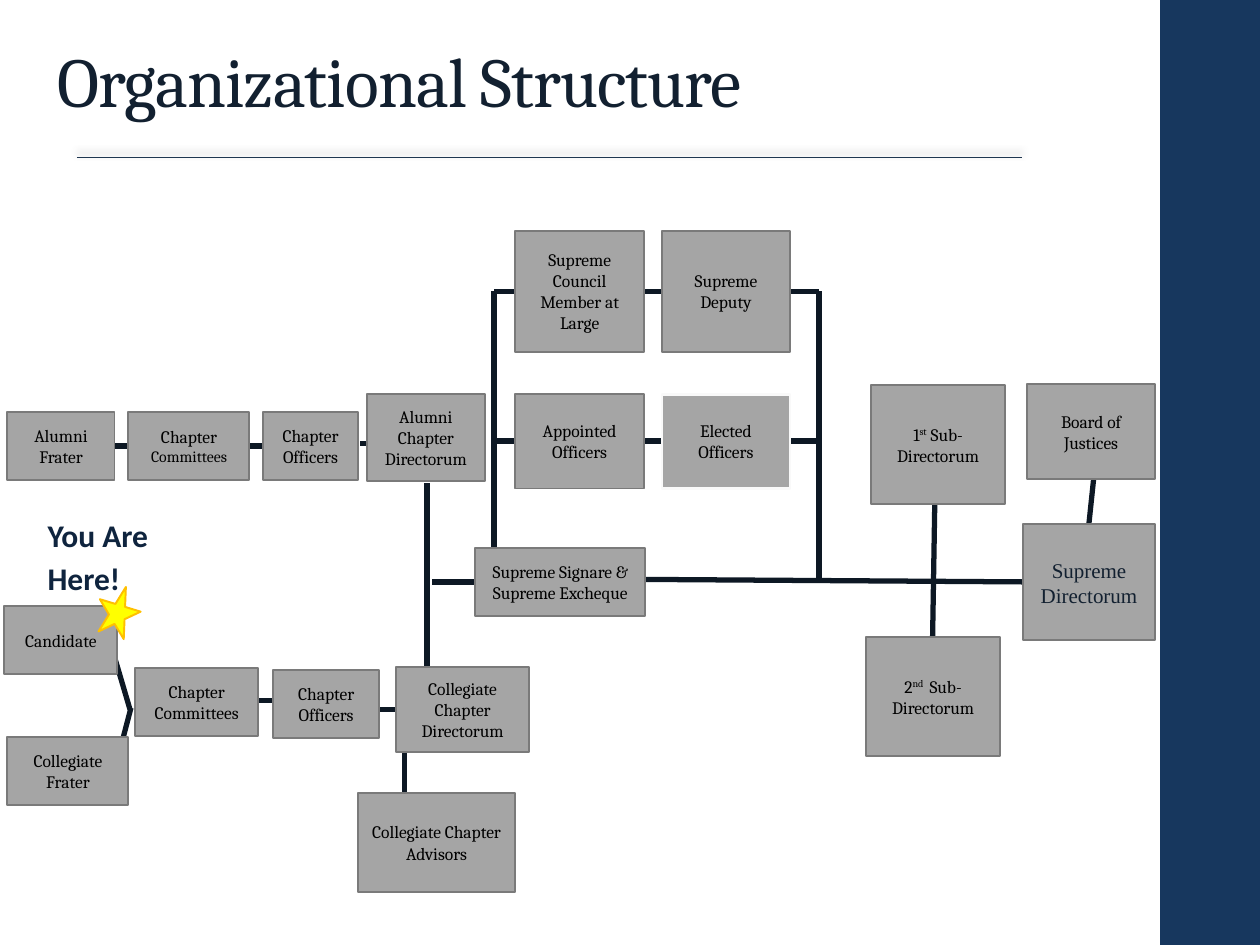
from lxml import etree
from pptx import Presentation
from pptx.dml.color import RGBColor
from pptx.enum.shapes import MSO_CONNECTOR, MSO_SHAPE
from pptx.enum.text import MSO_ANCHOR, PP_ALIGN
from pptx.oxml.ns import qn
from pptx.util import Cm, Pt

RECTANGLE, STAR = MSO_SHAPE.RECTANGLE, MSO_SHAPE.STAR_5_POINT
STRAIGHT = MSO_CONNECTOR.STRAIGHT
CENTER, LEFT = PP_ALIGN.CENTER, PP_ALIGN.LEFT
MIDDLE, TOP, BOTTOM = MSO_ANCHOR.MIDDLE, MSO_ANCHOR.TOP, MSO_ANCHOR.BOTTOM

NAVY = RGBColor(0x17, 0x37, 0x5E)
INK = RGBColor(0x12, 0x20, 0x30)
RULE = RGBColor(0x1E, 0x36, 0x50)
LINK = RGBColor(0x0D, 0x18, 0x24)
GREY = RGBColor(0xA5, 0xA5, 0xA5)
EDGE = RGBColor(0x7A, 0x7A, 0x7A)
PALE = RGBColor(0xF9, 0xF9, 0xF9)
BLACK = RGBColor(0, 0, 0)
YELLOW = RGBColor(0xFF, 0xFF, 0)
GOLD = RGBColor(0xFF, 0xC0, 0)
MARKER = RGBColor(0x0F, 0x24, 0x3E)

ROLE = {"name": "Cambria", "size": Pt(10), "color": BLACK}
SMALL = {**ROLE, "size": Pt(9)}
RAISED = {**ROLE, "baseline": 30000}
LEADER = {"name": "Times New Roman", "size": Pt(12), "color": INK}
HEADING = {"name": "Cambria", "size": Pt(40), "color": INK, "spc": -50}
CALLOUT = {"name": "Calibri", "size": Pt(18), "bold": True, "color": MARKER}


def write(shape, spans, align=CENTER, anchor=MIDDLE, **para_format):
    """Fill a shape with one paragraph of (text, format) spans."""
    frame = shape.text_frame
    frame.word_wrap = True
    frame.vertical_anchor = anchor
    para = frame.paragraphs[0]
    para.alignment = align
    for key, value in para_format.items():
        setattr(para, key, value)
    for text, look in spans:
        span = para.add_run()
        span.text = text
        for key, value in look.items():
            if key == "color":
                span.font.color.rgb = value
            elif key in ("baseline", "spc"):
                span.font._element.set(key, str(value))
            else:
                setattr(span.font, key, value)


def add_figure(page, kind, box, fill, edge=None, edge_width=1.1):
    shape = page.shapes.add_shape(kind, *map(Cm, box))
    shape.shadow.inherit = False
    shape.fill.solid()
    shape.fill.fore_color.rgb = fill
    if edge is None:
        shape.line.fill.background()
    else:
        shape.line.color.rgb = edge
        shape.line.width = Pt(edge_width)
    return shape


def add_line(page, ends, color=LINK, width=3):
    """Draw a straight line and return its effect list."""
    line = page.shapes.add_connector(STRAIGHT, *map(Cm, ends))
    line.line.color.rgb = color
    line.line.width = Pt(width)
    return etree.SubElement(line._element.spPr, qn("a:effectLst"))


def add_unit(page, left, top, links, roles):
    """Place links, then role boxes on top, from the unit's corner."""
    for x1, y1, x2, y2 in links:
        add_line(page, (left + x1, top + y1, left + x2, top + y2))
    for (x, y, width, height), label, *edge in roles:
        shape = add_figure(page, RECTANGLE, (left + x, top + y, width, height),
                           GREY, *(edge or [EDGE]))
        write(shape, [(label, ROLE)] if isinstance(label, str) else label)


def add_header(page, left, top, width, height):
    title = page.shapes.add_textbox(*map(Cm, (left, top, width, height)))
    write(title, [("Organizational Structure", HEADING)], LEFT, BOTTOM,
          line_spacing=0.9)
    # Rule with a soft shadow above it
    y = top + 2.98
    effects = add_line(page, (left + 0.64, y, left + 19.69, y), RULE, 0.75)
    shadow = etree.SubElement(effects, qn("a:outerShdw"), blurRad=str(Pt(4)),
                              dist=str(Pt(3)), dir="16200000", rotWithShape="0")
    tint = etree.SubElement(shadow, qn("a:srgbClr"), val="000000")
    etree.SubElement(tint, qn("a:alpha"), val="40000")


def add_alumni(page, left, top):
    links = [(2.14, 1.04, 2.44, 1.04), (4.88, 1.04, 5.23, 1.04),
             (7.11, 0.99, 7.39, 0.99)]
    roles = [
        ((0, 0.36, 2.16, 1.37), "Alumni Frater"),
        ((2.44, 0.36, 2.44, 1.37), [("Chapter ", ROLE), ("Committees", SMALL)]),
        ((5.16, 0.36, 1.9, 1.37), "Chapter Officers"),
        ((7.24, 0, 2.39, 1.75), "Alumni Chapter Directorum"),
    ]
    add_unit(page, left, top, links, roles)


def add_council(page, left, top):
    member_x, deputy_x, width = 1.78, 4.73, 2.59
    left_rail, right_rail = 1.35, 7.9
    rows = (1.22, 4.24)
    links = [(0, 8.84, 0, 5.08), (0.1, 7.08, 0.94, 7.08),
             (4.37, 7.03, 12.01, 7.08),
             (left_rail, rows[0], left_rail, 6.4),
             (right_rail, rows[0], right_rail, 7.06)]
    for y in rows:
        links += [(left_rail, y, member_x, y),
                  (member_x + width, y, deputy_x, y),
                  (deputy_x + width, y, right_rail, y)]
    roles = [
        ((member_x, 0, width, 2.44), "Supreme Council Member at Large"),
        ((deputy_x, 0, width, 2.44), "Supreme Deputy"),
        ((member_x, 3.3, width, 1.9), "Appointed Officers"),
        ((deputy_x, 3.3, width, 1.9), "Elected Officers", PALE, 1.35),
        ((0.97, 6.4, 3.43, 1.37), "Supreme Signare & Supreme Excheque"),
    ]
    add_unit(page, left, top, links, roles)


def add_collegiate(page, left, top):
    links = [(2.18, 0.86, 2.54, 2.08), (2.18, 3.5, 2.56, 2.05),
             (5.13, 1.9, 5.41, 1.9), (7.46, 2.08, 7.9, 2.08),
             (8.07, 3.76, 8.07, 2.64)]
    roles = [
        ((0, 0, 2.29, 1.37), "Candidate"),
        ((0.07, 2.64, 2.44, 1.37), "Collegiate Frater"),
        ((2.64, 1.24, 2.49, 1.37), "Chapter Committees"),
        ((5.43, 1.29, 2.13, 1.37), "Chapter Officers"),
        ((7.9, 1.22, 2.69, 1.73), "Collegiate Chapter Directorum"),
        ((7.13, 3.76, 3.18, 2.01), "Collegiate Chapter Advisors"),
    ]
    add_unit(page, left, top, links, roles)
    # Marker on the candidate
    star = add_figure(page, STAR, (left + 1.88, top - 0.41, 0.86, 1.02),
                      YELLOW, GOLD)
    star.rotation = 17
    callout = page.shapes.add_textbox(Cm(left + 0.63), Cm(top - 2.06),
                                      Cm(3.99), Cm(1.22))
    write(callout, [("You Are Here!", CALLOUT)], LEFT, TOP,
          line_spacing=1.15, space_after=Pt(10))


def add_directorum(page, left, top):
    links = [(4.6, 1.88, 4.5, 2.82), (1.4, 2.08, 1.35, 5.1)]
    sub = (" Sub-Directorum", ROLE)
    roles = [
        ((3.25, 0, 2.59, 1.9), "Board of Justices"),
        ((0.1, 0.02, 2.72, 2.39), [("1", ROLE), ("st", RAISED), sub]),
        ((0, 5.1, 2.72, 2.39), [("2", ROLE), ("nd ", RAISED), sub]),
        ((3.17, 2.82, 2.67, 2.34), [("Supreme Directorum", LEADER)]),
    ]
    add_unit(page, left, top, links, roles)


def main():
    deck = Presentation()
    deck.slide_width, deck.slide_height = Cm(25.4), Cm(19.05)
    page = deck.slides.add_slide(deck.slide_layouts[6])
    add_figure(page, RECTANGLE, (23.39, 0, 2.03, 19.05), NAVY)  # Side band
    add_header(page, 0.91, 0.2, 20.19, 2.39)
    add_alumni(page, 0.15, 7.95)
    add_council(page, 8.61, 4.65)
    add_collegiate(page, 0.08, 12.22)
    add_directorum(page, 17.45, 7.75)
    deck.save("out.pptx")


if __name__ == "__main__":
    main()
